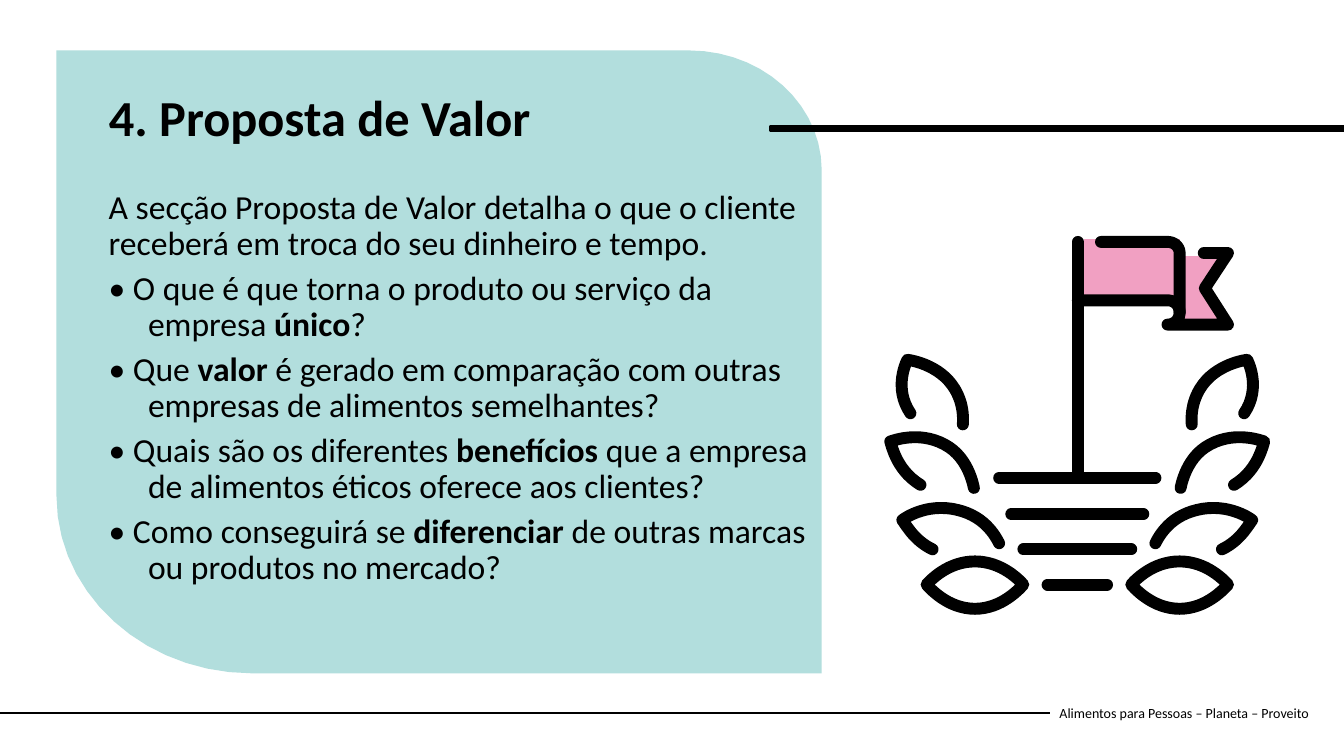
from pptx import Presentation
from pptx.dml.color import RGBColor
from pptx.enum.shapes import MSO_CONNECTOR, MSO_SHAPE
from pptx.enum.text import MSO_ANCHOR, MSO_AUTO_SIZE, PP_ALIGN
from pptx.oxml.ns import qn
from pptx.util import Inches, Pt
from lxml.etree import SubElement

FONT, BLACK, TEAL, PINK = "Calibri", "000000", "B2DEDD", "F1A0C2"
INK = 8.5  # icon stroke width in points
MIRROR = 21.37  # left x + right x of the mirrored leaves

TITLE = "4. Proposta de Valor"
FOOTER = "Alimentos para Pessoas – Planeta – Proveito"
INTRO = ("A secção Proposta de Valor detalha o que o cliente "
         "receberá em troca do seu dinheiro e tempo.")
# Each question: before, bold word, after
QUESTIONS = [
    ("• O que é que torna o produto ou serviço da empresa ", "único", "?"),
    ("• Que ", "valor ", "é gerado em comparação com outras empresas de alimentos semelhantes?"),
    ("• Quais são os diferentes ", "benefícios ",
     "que a empresa de alimentos éticos oferece aos clientes?"),
    ("• Como conseguirá se ", "diferenciar", " de outras marcas ou produtos no mercado?"),
]

# Outlines: two numbers are a corner, six are a Bézier curve
PANEL = [(8.15, 6.68), (2.5, 6.68), (1.43, 6.68, 0.56, 5.89, 0.56, 4.92), (0.56, 0.5),
         (6.83, 0.5), (7.56, 0.5, 8.15, 1.03, 8.15, 1.69)]
FLAG_TAIL = [(12.18, 2.54), (11.67, 2.54), (11.67, 3.22), (12.16, 3.22), (11.9, 2.86)]
FLAG_CLOTH = [(10.75, 2.37), (11.7, 2.37), (11.7, 3.03), (10.75, 3.03)]
FLAG_EDGE = [(10.92, 2.4), (11.58, 2.4), (11.65, 2.4, 11.7, 2.45, 11.7, 2.51), (11.7, 3.1),
             (11.7, 3.17, 11.65, 3.22, 11.58, 3.22), (12.18, 3.22), (11.95, 2.86),
             (12.18, 2.51), (11.94, 2.51)]
FLAG_HEM = [(10.69, 2.98), (11.58, 2.98), (11.65, 2.98, 11.7, 3.03, 11.7, 3.1)]
LEAVES = [
    [(9.19, 5.8), (9.27, 5.71, 9.44, 5.57, 9.67, 5.57), (9.9, 5.57, 10.07, 5.71, 10.15, 5.8),
     (10.07, 5.89, 9.9, 6.04, 9.67, 6.04), (9.44, 6.04, 9.27, 5.89, 9.19, 5.8)],
    [(9.91, 5.39), (9.86, 5.29, 9.75, 5.12, 9.5, 5.06), (9.22, 4.99, 9, 5.12, 8.95, 5.16),
     (9, 5.23, 9.08, 5.37, 9.25, 5.45)],
    [(9.66, 4.84), (9.65, 4.8, 9.6, 4.53, 9.37, 4.41), (9.13, 4.28, 8.89, 4.36, 8.83, 4.38),
     (8.85, 4.44, 8.9, 4.67, 9.13, 4.81)],
    [(9.55, 4.21), (9.56, 4.08, 9.53, 3.96, 9.47, 3.86), (9.34, 3.64, 9.08, 3.58, 9, 3.57),
     (8.96, 3.65, 8.88, 3.88, 9.03, 4.1)],
]
POLE = (10.69, 2.4, 10.69, 4.74)
GROUND = [(9.91, 11.46, 4.74), (10.03, 11.34, 5.1), (10.15, 11.22, 5.45), (10.39, 10.98, 5.8)]


def rgb(color):
    return RGBColor.from_string(color)


def set_line(sp, width, color=BLACK, rounded=True):
    sp.line.color.rgb = rgb(color)
    sp.line.width = Pt(width)
    if rounded:
        ln = sp.line._get_or_add_ln()
        ln.set("cap", "rnd")
        SubElement(ln, qn("a:round"))


def set_fill(sp, color):
    sp.fill.solid()
    sp.fill.fore_color.rgb = rgb(color)


def trace(outline, steps=14):
    """Turn corners and Bézier curves into a list of points."""
    points = []
    for step in outline:
        if len(step) == 2:
            points.append(step)
            continue
        nodes = [points[-1], step[:2], step[2:4], step[4:]]
        for i in range(1, steps + 1):
            t = i / steps
            weights = ((1 - t) ** 3, 3 * t * (1 - t) ** 2, 3 * t * t * (1 - t), t ** 3)
            points.append(tuple(sum(w * n[axis] for w, n in zip(weights, nodes))
                                for axis in (0, 1)))
    return points


def add_outline(s, points, fill=None):
    """Draw a filled area, or an open ink stroke when there is no fill."""
    (x, y), *rest = points
    builder = s.shapes.build_freeform(Inches(x), Inches(y), scale=1.0)
    builder.add_line_segments([(Inches(a), Inches(b)) for a, b in rest], close=bool(fill))
    sp = builder.convert_to_shape()
    sp.shadow.inherit = False
    if fill:
        set_fill(sp, fill)
        sp.line.fill.background()
    else:
        sp.fill.background()
        set_line(sp, INK)


def add_line(s, x1, y1, x2, y2, width, rounded=True):
    line = s.shapes.add_connector(MSO_CONNECTOR.STRAIGHT, *map(Inches, (x1, y1, x2, y2)))
    set_line(line, width, rounded=rounded)
    SubElement(line._element.spPr, qn("a:effectLst"))


def add_text(p, text, size, bold=False):
    r = p.add_run()
    r.text = text
    r.font.name, r.font.size, r.font.bold = FONT, Pt(size), bold
    r.font.color.rgb = rgb(BLACK)


def set_frame(sp, anchor=MSO_ANCHOR.TOP):
    tf = sp.text_frame
    tf.word_wrap = True
    tf.auto_size = MSO_AUTO_SIZE.NONE
    tf.vertical_anchor = anchor
    return tf


def add_box(s, *place, anchor=MSO_ANCHOR.TOP):
    return set_frame(s.shapes.add_textbox(*map(Inches, place)), anchor)


def main():
    prs = Presentation()
    prs.slide_width, prs.slide_height = Inches(13.33), Inches(7.5)
    s = prs.slides.add_slide(prs.slide_layouts[5])

    p = add_box(s, 10.41, 6.87, 2.73, 0.4, anchor=MSO_ANCHOR.MIDDLE).paragraphs[0]
    add_text(p, FOOTER, 10)
    add_line(s, 0, 7.07, 10.41, 7.07, 1.5, rounded=False)

    add_outline(s, trace(PANEL), TEAL)
    bar = s.shapes.add_shape(MSO_SHAPE.RECTANGLE, *map(Inches, (7.64, 1.25, 5.69, 0.05)))
    bar.shadow.inherit = False
    set_fill(bar, BLACK)
    set_line(bar, 1.93, rounded=False)

    tf = add_box(s, 0.98, 1.84, 7.17, 3.31)
    p = tf.paragraphs[0]
    p.line_spacing, p.space_before = 0.9, Pt(10)
    add_text(p, INTRO, 24)
    for question in QUESTIONS:
        p = tf.add_paragraph()
        p.line_spacing, p.space_before = 0.9, Pt(6)
        pPr = p._p.get_or_add_pPr()
        pPr.set("marL", str(Inches(0.39)))
        pPr.set("indent", str(Inches(-0.39)))
        for text, bold in zip(question, (False, True, False)):
            add_text(p, text, 24, bold)

    title = s.shapes.title
    title.left, title.top, title.width, title.height = map(Inches, (0.98, 0.87, 5.46, 1.09))
    p = set_frame(title).paragraphs[0]
    p.alignment, p.line_spacing = PP_ALIGN.LEFT, 0.9
    add_text(p, TITLE, 36, bold=True)
    s.shapes._spTree.append(title._element)  # bring in front of the panel

    for cloth in (FLAG_TAIL, FLAG_CLOTH):
        add_outline(s, cloth, PINK)
    for leaf in map(trace, LEAVES):
        add_outline(s, leaf)
        add_outline(s, [(MIRROR - x, y) for x, y in leaf])
    for edge in (FLAG_EDGE, FLAG_HEM):
        add_outline(s, trace(edge))
    add_line(s, *POLE, INK)
    for left, right, y in GROUND:
        add_line(s, left, y, right, y, INK)

    prs.save("out.pptx")


if __name__ == "__main__":
    main()
